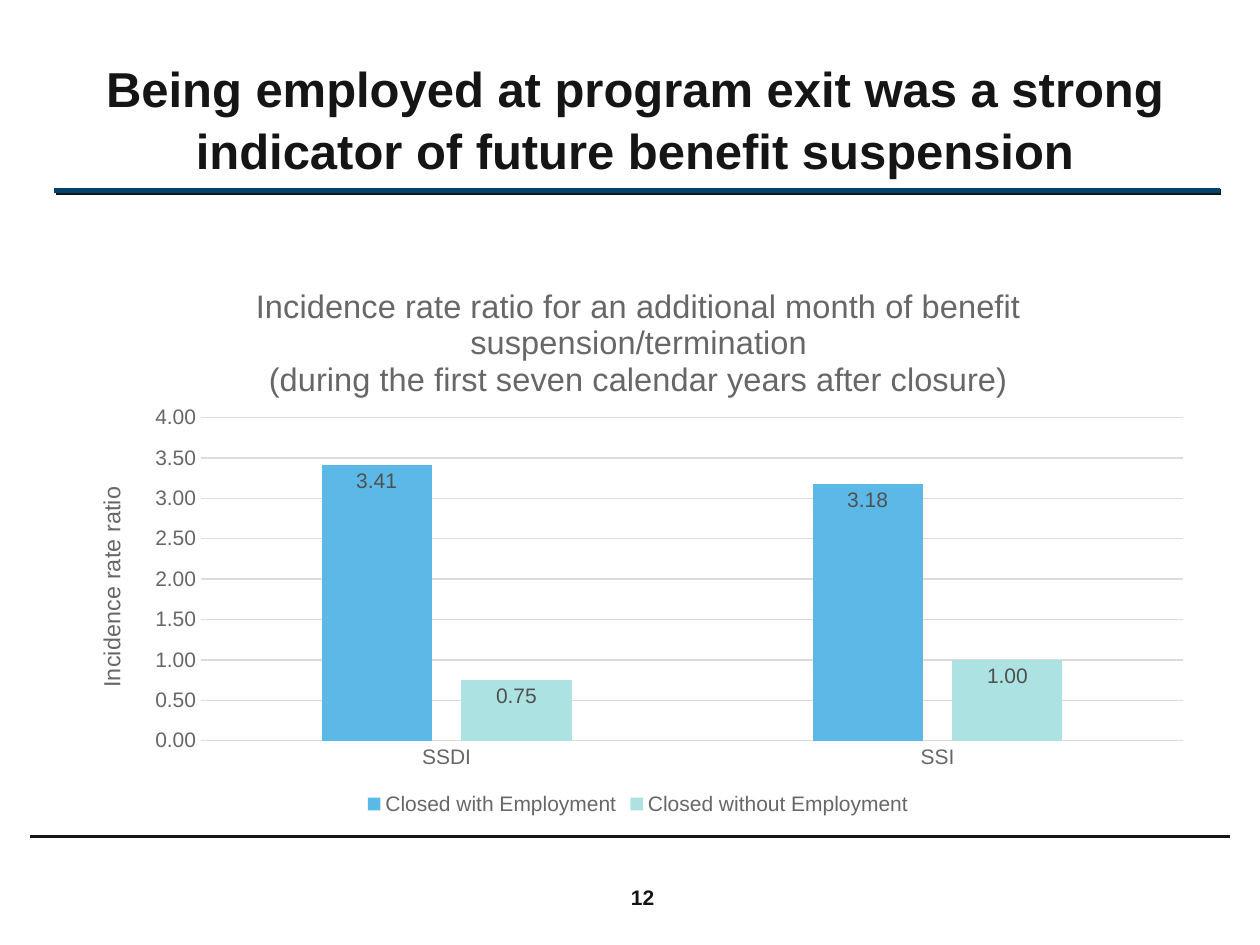
from lxml.etree import SubElement
from pptx import Presentation
from pptx.chart.data import CategoryChartData
from pptx.dml.color import RGBColor
from pptx.enum.chart import (XL_CHART_TYPE as ChartType, XL_LABEL_POSITION as LabelPosition,
                             XL_LEGEND_POSITION as LegendPosition, XL_TICK_MARK as TickMark)
from pptx.enum.shapes import MSO_CONNECTOR as Connector
from pptx.enum.text import MSO_ANCHOR as Anchor, PP_ALIGN as Align
from pptx.oxml import parse_xml
from pptx.oxml.ns import nsdecls, qn
from pptx.util import Pt

INK = "151515"
GREY = "676767"
RULE = "DCDCDC"
CATEGORIES = ["SSDI", "SSI"]
SERIES = [
    ("Closed with Employment", [3.41, 3.18], "5CB9E7"),
    ("Closed without Employment", [0.75, 1.00], "ADE2E2"),
]
CHART_TITLE = [
    "Incidence rate ratio for an additional month of benefit suspension/termination",
    "(during the first seven calendar years after closure)",
]


def color(value):
    return RGBColor.from_string(value)


def style_font(font, size, ink, bold=False):
    font.name = "Arial"
    font.size = Pt(size)
    font.bold = bold
    font.color.rgb = color(ink)


def style_line(line, ink, width):
    line.color.rgb = color(ink)
    line.width = Pt(width)


def add_text(page, bounds, text, size, anchor, spacing=1):
    box = page.shapes.add_textbox(*map(Pt, bounds))
    frame = box.text_frame
    frame.word_wrap = True
    frame.vertical_anchor = anchor
    para = frame.paragraphs[0]
    para.alignment = Align.CENTER
    para.line_spacing = spacing
    span = para.add_run()
    span.text = text
    style_font(span.font, size, INK, True)


def add_rule(page, left, right, top, ink, width, shadow=False):
    rule = page.shapes.add_connector(Connector.STRAIGHT, Pt(left), Pt(top), Pt(right), Pt(top))
    style_line(rule.line, ink, width)
    effects = SubElement(rule._element.spPr, qn("a:effectLst"))
    if shadow:
        outer = SubElement(effects, qn("a:outerShdw"), dist=str(Pt(1.4)), dir="2700000",
                           algn="ctr", rotWithShape="0")
        SubElement(outer, qn("a:srgbClr"), val=INK)


def add_title_text(title, lines, size):
    frame = title.text_frame
    for index, text in enumerate(lines):
        para = frame.add_paragraph() if index else frame.paragraphs[0]
        span = para.add_run()
        span.text = text
        style_font(span.font, size, GREY)


def make_layout(target="", **edges):
    inner = f'<c:layoutTarget val="{target}"/>' if target else ""
    modes = "".join(f'<c:{edge}Mode val="edge"/>' for edge in edges if edge in "xy")
    values = "".join(f'<c:{edge} val="{value}"/>' for edge, value in edges.items())
    return parse_xml(f'<c:layout {nsdecls("c")}><c:manualLayout>{inner}{modes}{values}'
                     '</c:manualLayout></c:layout>')


def place(parent, layout, index):
    for old in parent.findall(qn("c:layout")):
        parent.remove(old)
    parent.insert(index, layout)


def style_axes(chart):
    categories, values = chart.category_axis, chart.value_axis
    for axis in (categories, values):
        axis.major_tick_mark = axis.minor_tick_mark = TickMark.NONE
        style_font(axis.tick_labels.font, 12, GREY)
    style_line(categories.format.line, RULE, 0.75)
    values.format.line.fill.background()
    values.minimum_scale, values.maximum_scale, values.major_unit = 0, 4, 0.5
    values.tick_labels.number_format = "0.00"
    values.tick_labels.number_format_is_linked = False
    style_line(values.major_gridlines.format.line, RULE, 0.75)
    add_title_text(values.axis_title, ["Incidence rate ratio"], 13.3)


def style_series(plot):
    plot.gap_width, plot.overlap = 219, -27
    plot.vary_by_categories = False
    for series, (_, _, fill) in zip(plot.series, SERIES):
        series.format.fill.solid()
        series.format.fill.fore_color.rgb = color(fill)
        labels = series.data_labels
        labels.show_value = True
        labels.position = LabelPosition.INSIDE_END
        labels.number_format = "0.00"
        labels.number_format_is_linked = False
        style_font(labels.font, 12, "505050")


def add_ratio_chart(page, bounds):
    data = CategoryChartData(number_format="0.00")
    data.categories = CATEGORIES
    for name, values, _ in SERIES:
        data.add_series(name, values)
    chart = page.shapes.add_chart(ChartType.COLUMN_CLUSTERED, *map(Pt, bounds), data).chart
    style_font(chart.font, 10, INK)
    chart.has_title = True
    add_title_text(chart.chart_title, CHART_TITLE, 18.6)
    place(chart.chart_title._element, make_layout(x=0.16, y=0.05), 1)
    chart.chart_title.include_in_layout = False
    style_axes(chart)
    style_series(chart.plots[0])
    chart.has_legend = True
    chart.legend.position = LegendPosition.BOTTOM
    chart.legend.include_in_layout = False
    style_font(chart.legend.font, 12, GREY)
    place(chart._chartSpace.chart.plotArea,
          make_layout("inner", x=0.115, y=0.29, w=0.865, h=0.57), 0)


def main():
    deck = Presentation()
    deck.slide_width, deck.slide_height = Pt(720), Pt(540)
    page = deck.slides.add_slide(deck.slide_layouts[6])
    add_rule(page, 31, 697, 108.7, "00436E", 3, shadow=True)
    add_rule(page, 17.3, 702.7, 478, INK, 1.5)
    add_text(page, (347.8, 501.8, 38.9, 21.6), "12", 12, Anchor.TOP)
    add_ratio_chart(page, (40.3, 144.7, 648.7, 324))
    add_text(page, (30.2, 15.8, 665.3, 90),
             "Being employed at program exit was a strong indicator of future benefit suspension",
             28, Anchor.BOTTOM, 1.05)
    deck.save("out.pptx")


if __name__ == "__main__":
    main()
